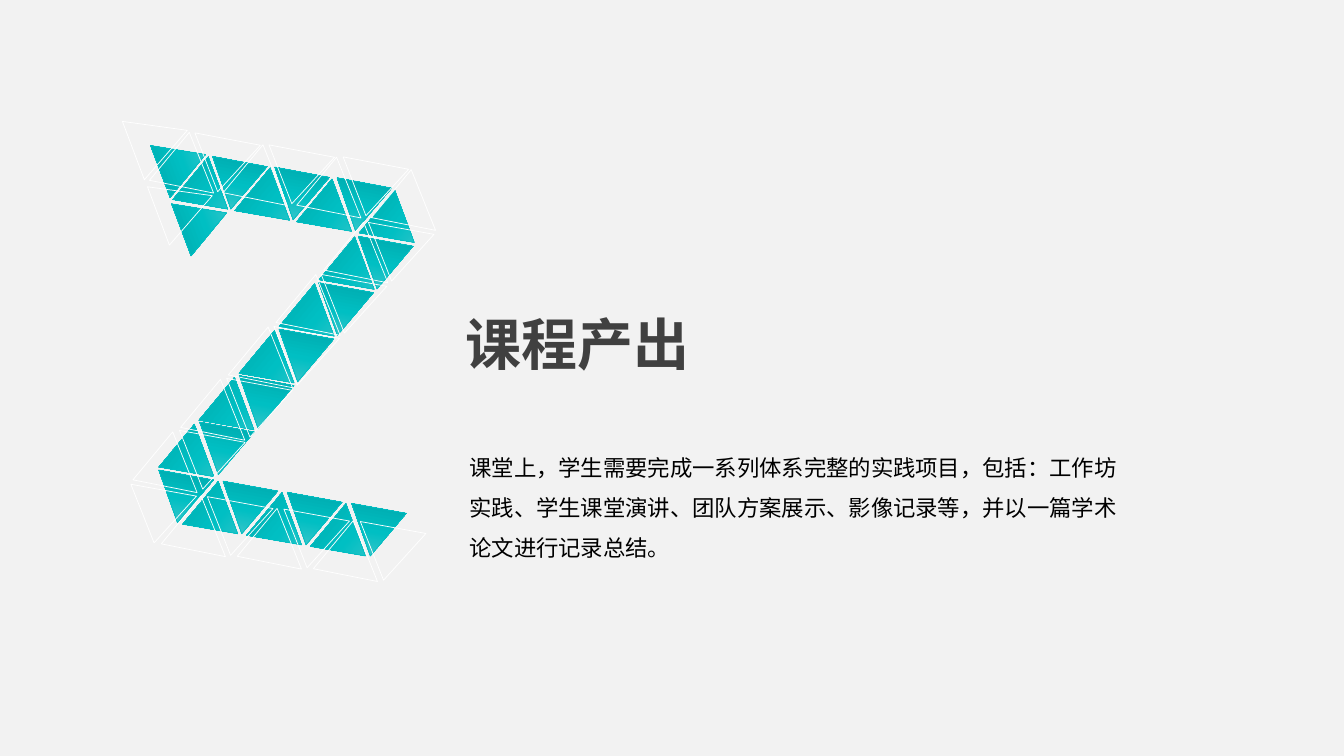
import lxml.etree
import pptx
import pptx.dml.color
import pptx.enum.shapes
import pptx.enum.text
import pptx.oxml
import pptx.oxml.ns
import pptx.util

Cm = pptx.util.Cm
Pt = pptx.util.Pt
qn = pptx.oxml.ns.qn

HEADING = "课程产出"
BODY = (
    "课堂上，学生需要完成一系列体系完整的实践项目，包括：工作坊实践、学生课堂演讲、"
    "团队方案展示、影像记录等，并以一篇学术论文进行记录总结。"
)

THEME = {
    "background": "F2F2F2",
    "gradient": ((0, "4BC7CB"), (50, "00BFC3"), (100, "00AAAD")),
    "teal": "00BFC3",
    "outline": "FFFFFF",
    "heading": "404040",
    "body": "000000",
    "font": "League Spartan",
    "heading_size": 40,
    "body_size": 16,
    "line_width": 0.5,
}

# first centre, step, count, rotation
TRIANGLE_RUNS = (
    ((4.61, 4.11), (0.53, 1.47), 2, 69.4),
    ((5.27, 4.88), (1.56, 0.28), 3, 129.7),
    ((5.93, 4.67), (1.57, 0.27), 3, 190.7),
    ((9.97, 5.72), (-1.01, 1.18), 6, 129.7),
    ((9.61, 6.68), (-1.0, 1.17), 5, 190.3),
    ((5.52, 13.06), (1.61, 0.28), 3, 129.7),
    ((4.58, 12.57), (1.62, 0.28), 4, 190.3),
)
SOLID_SIZE = (1.4, 1.22)
SIDE_OUTLINE_SIZE = (1.57, 1.45)
FLAT_OUTLINE_SIZE = (1.68, 1.35)
OUTLINE_ORIGIN = (4.04, 3.54)
OUTLINE_SCALE = (1.19, 1.12)


def color(name):
    return pptx.dml.color.RGBColor.from_string(THEME[name])


def triangle_centers():
    for start, step, count, rotation in TRIANGLE_RUNS:
        for index in range(count):
            yield tuple(s + index * d for s, d in zip(start, step)), rotation


def enlarge(center):
    anchor = TRIANGLE_RUNS[0][0]
    return tuple(
        origin + scale * (value - base)
        for origin, scale, value, base in zip(OUTLINE_ORIGIN, OUTLINE_SCALE, center, anchor)
    )


def add_triangle(page, center, size, rotation, line):
    width, height = size
    triangle = page.shapes.add_shape(
        pptx.enum.shapes.MSO_SHAPE.ISOSCELES_TRIANGLE,
        Cm(center[0] - width / 2), Cm(center[1] - height / 2), Cm(width), Cm(height),
    )
    triangle.rotation = rotation
    triangle.shadow.inherit = False
    triangle.line.color.rgb = color(line)
    triangle.line.width = Pt(THEME["line_width"])
    triangle.fill.background()
    return triangle


def fill_gradient(shape):
    shape.fill.gradient()
    shape.fill.gradient_angle = 270
    stops = shape._element.spPr.find(qn("a:gradFill")).find(qn("a:gsLst"))
    for stop in list(stops):
        stops.remove(stop)
    for position, value in THEME["gradient"]:
        stop = lxml.etree.SubElement(stops, qn("a:gs"), pos=str(position * 1000))
        lxml.etree.SubElement(stop, qn("a:srgbClr"), val=value)


def add_text(page, text, area, style, spacing, anchor, bold=False):
    box = page.shapes.add_textbox(*(Cm(value) for value in area))
    frame = box.text_frame
    frame.word_wrap = True
    frame.vertical_anchor = anchor
    frame.text = text
    para = frame.paragraphs[0]
    para.line_spacing = spacing
    span = para.runs[0]
    span.font.name = THEME["font"]
    span.font.size = Pt(THEME[style + "_size"])
    span.font.bold = bold
    span.font.color.rgb = color(style)
    lxml.etree.SubElement(span.font._element, qn("a:ea"), typeface=THEME["font"])


def main():
    deck = pptx.Presentation()
    deck.slide_width, deck.slide_height = Cm(33.87), Cm(19.05)
    page = deck.slides.add_slide(deck.slide_layouts[6])
    page.background.fill.solid()
    page.background.fill.fore_color.rgb = color("background")

    for center, rotation in triangle_centers():
        fill_gradient(add_triangle(page, center, SOLID_SIZE, rotation, "teal"))
    for center, rotation in triangle_centers():
        size = FLAT_OUTLINE_SIZE if rotation > 180 else SIDE_OUTLINE_SIZE
        add_triangle(page, enlarge(center), size, rotation, "outline")

    anchors = pptx.enum.text.MSO_ANCHOR
    add_text(page, HEADING, (11.48, 7.9, 7.29, 1.73), "heading", 0.9, anchors.MIDDLE, True)
    add_text(page, BODY, (11.58, 10.97, 16.94, 3.33), "body", 1.5, anchors.TOP)
    deck.save("out.pptx")


if __name__ == "__main__":
    main()
